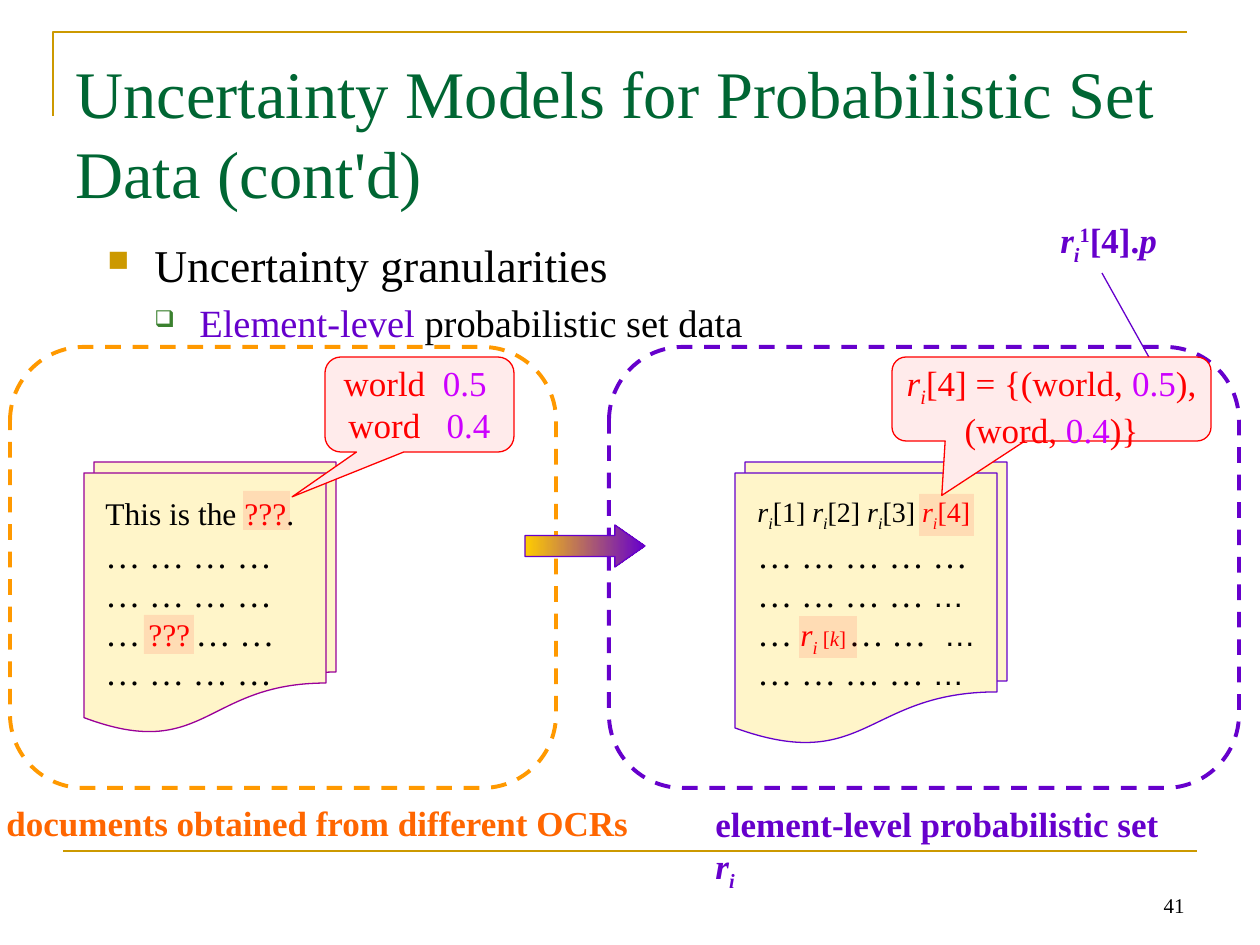
from dataclasses import dataclass, replace
from typing import NamedTuple
from lxml import etree
from pptx import Presentation
from pptx.dml.color import RGBColor
from pptx.enum.dml import MSO_LINE
from pptx.enum.shapes import MSO_CONNECTOR, MSO_SHAPE
from pptx.enum.text import MSO_ANCHOR, PP_ALIGN
from pptx.oxml.ns import qn
from pptx.util import Pt

SCALE = 914400 / 126  # EMU in one px
BLACK = RGBColor(0x00, 0x00, 0x00)
GREEN = RGBColor(0x00, 0x66, 0x33)
LEAF = RGBColor(0x3B, 0x81, 0x2F)
GOLD = RGBColor(0xCC, 0x99, 0x00)
YELLOW = RGBColor(0xFF, 0xCC, 0x00)
AMBER = RGBColor(0xFF, 0x99, 0x00)
ORANGE = RGBColor(0xFF, 0x66, 0x00)
VIOLET = RGBColor(0x66, 0x00, 0xCC)
PLUM = RGBColor(0x99, 0x00, 0x99)
MAGENTA = RGBColor(0xCC, 0x00, 0xFF)
RED = RGBColor(0xFF, 0x00, 0x00)
PINK = RGBColor(0xFF, 0xEB, 0xEB)
CREAM = RGBColor(0xFF, 0xF5, 0xC9)


class Box(NamedTuple):
    x: int
    y: int
    w: int
    h: int


@dataclass(frozen=True)
class Run:
    text: str
    color: RGBColor = BLACK
    size: int = 20
    italic: bool = False
    bold: bool = False
    base: int = 0  # percent above or below the baseline
    font: str = "Times New Roman"
    spacing: int = 0  # extra character spacing, points


@dataclass(frozen=True)
class Bullet:
    char: str
    color: RGBColor
    percent: int
    left: int
    hang: int


def px(n: float) -> int:
    return round(n * SCALE)


def emu(box: Box) -> list[int]:
    return [px(n) for n in box]


def r_sub(proto: Run) -> list[Run]:
    """The set symbol r with subscript i."""
    r = replace(proto, text="r", italic=True)
    return [r, replace(r, text="i", base=-25)]


def add_runs(p, runs: list[Run]) -> None:
    for run in runs:
        r = p.add_run()
        r.text = run.text
        fmt = {"name": run.font, "size": Pt(run.size), "bold": run.bold, "italic": run.italic}
        for key, value in fmt.items():
            setattr(r.font, key, value)
        r.font.color.rgb = run.color
        rPr = r._r.get_or_add_rPr()
        if run.base:
            rPr.set("baseline", str(run.base * 1000))
        if run.spacing:
            rPr.set("spc", str(run.spacing * 100))


def fill_text(sp, paras: list[list[Run]], align=PP_ALIGN.LEFT, margin=None, **frame):
    tf = sp.text_frame
    fmt = {"word_wrap": True, "vertical_anchor": MSO_ANCHOR.TOP, **frame}
    if margin is not None:
        fmt.update({f"margin_{side}": margin for side in ("left", "right", "top", "bottom")})
    for key, value in fmt.items():
        setattr(tf, key, value)
    for i, runs in enumerate(paras):
        p = tf.add_paragraph() if i else tf.paragraphs[0]
        p.alignment = align
        add_runs(p, runs)
    return tf


def add_text(shapes, box: Box, paras: list[list[Run]], **fmt):
    return fill_text(shapes.add_textbox(*emu(box)), paras, **fmt)


def set_bullet(p, bullet: Bullet) -> None:
    pPr = p._p.get_or_add_pPr()
    pPr.set("marL", str(px(bullet.left)))
    pPr.set("indent", str(-px(bullet.hang)))
    clr = etree.SubElement(pPr, qn("a:buClr"))
    etree.SubElement(clr, qn("a:srgbClr"), val=str(bullet.color))
    etree.SubElement(pPr, qn("a:buSzPct"), val=str(bullet.percent * 1000))
    etree.SubElement(pPr, qn("a:buChar"), char=bullet.char)


def add_shape(shapes, kind, box: Box, line=None, fill=None, width=0.75, adj=()):
    sp = shapes.add_shape(kind, *emu(box))
    sp.shadow.inherit = False
    for i, value in enumerate(adj):
        sp.adjustments[i] = value
    if fill is None:
        sp.fill.background()
    else:
        sp.fill.solid()
        sp.fill.fore_color.rgb = fill
    if line is None:
        sp.line.fill.background()
    else:
        sp.line.color.rgb = line
        sp.line.width = Pt(width)
    return sp


def add_line(shapes, x1: int, y1: int, x2: int, y2: int, color: RGBColor, width: float) -> None:
    c = shapes.add_connector(MSO_CONNECTOR.STRAIGHT, px(x1), px(y1), px(x2), px(y2))
    c.line.color.rgb = color
    c.line.width = Pt(width)
    etree.SubElement(c._element.spPr, qn("a:effectLst"))


def add_document(shapes, x: int, w: int, h: int, line: RGBColor, row_x: int, row_w: int,
                 rows: list[list[Run]], marks: list[Box]) -> None:
    for box in (Box(x + 10, 462, w, h), Box(x, 473, w, h)):
        add_shape(shapes, MSO_SHAPE.FLOWCHART_DOCUMENT, box, line, CREAM)
    for i, runs in enumerate(rows):
        add_text(shapes, Box(row_x, 488 + 39 * i, row_w, 54), [runs])
    for box in marks:
        mark = add_shape(shapes, MSO_SHAPE.RECTANGLE, box, fill=RED)
        clr = mark._element.spPr.find(qn("a:solidFill"))[0]
        etree.SubElement(clr, qn("a:alpha"), val="10000")


def main() -> None:
    prs = Presentation()
    prs.slide_width, prs.slide_height = px(1260), px(945)
    s = prs.slides.add_slide(prs.slide_layouts[6])
    sh = s.shapes

    # Frame lines and page number
    fb = sh.build_freeform(53, 116, scale=SCALE)
    fb.add_line_segments([(53, 32), (1187, 32)], close=False)
    corner = fb.convert_to_shape()
    corner.shadow.inherit = False
    corner.fill.background()
    corner.line.color.rgb = GOLD
    corner.line.width = Pt(1.5)
    add_line(sh, 63, 851, 1197, 851, GOLD, 1.5)
    add_text(sh, Box(903, 861, 294, 63), [[Run("41", size=12)]],
             align=PP_ALIGN.RIGHT, vertical_anchor=MSO_ANCHOR.BOTTOM)

    # Title and bullets
    title = "Uncertainty Models for Probabilistic Set Data (cont'd)"
    add_text(sh, Box(63, 38, 1134, 158), [[Run(title, GREEN, 38)]], margin_top=px(14))
    tf = add_text(sh, Box(95, 231, 1134, 624), [
        [Run("Uncertainty granularities", size=26)],
        [Run("Element-level ", VIOLET, 22), Run("probabilistic set data", size=22)],
    ], align=PP_ALIGN.JUSTIFY)
    bullets = (Bullet("■", GOLD, 65, 47, 47), Bullet("❑", LEAF, 60, 92, 45))
    for p, bullet, gap in zip(tf.paragraphs, bullets, (5.2, 4.4)):
        p.space_before = Pt(gap)
        set_bullet(p, bullet)

    # Dashed panels and the arrow between them
    for box, color in ((Box(10, 347, 546, 441), AMBER), (Box(609, 347, 630, 441), VIOLET)):
        panel = add_shape(sh, MSO_SHAPE.ROUNDED_RECTANGLE, box, color, width=2.25, adj=(0.167,))
        panel.line.dash_style = MSO_LINE.DASH
    arrow = add_shape(sh, MSO_SHAPE.RIGHT_ARROW, Box(525, 525, 120, 42), VIOLET, adj=(0.5, 0.716))
    arrow.fill.gradient()
    arrow.fill.gradient_angle = 0
    for stop, color in zip(arrow.fill.gradient_stops, (YELLOW, VIOLET)):
        stop.color.rgb = color

    # Labels
    bold = Run("", VIOLET, bold=True)
    add_text(sh, Box(-6, 795, 655, 54),
             [[Run("documents obtained from different OCRs", ORANGE, bold=True)]])
    add_text(sh, Box(703, 796, 496, 54),
             [[replace(bold, text="element-level probabilistic set "), *r_sub(bold)]])
    add_line(sh, 1102, 273, 1155, 368, VIOLET, 0.75)
    add_text(sh, Box(1048, 212, 123, 54), [[
        *r_sub(bold), replace(bold, text="1", base=30), replace(bold, text="[4]."),
        replace(bold, text="p", italic=True)]], word_wrap=False)

    # Scanned documents
    dots, end = Run("… … … …"), Run(" …", size=18, font="Arial")
    add_document(sh.add_group_shape().shapes, 84, 242, 262, PLUM, 93, 224, [
        [Run("This is the ", size=18), Run("???", RED, 18), Run(".", size=18)],
        [dots], [dots],
        [Run("…"), Run(" ", size=18), Run("???", RED, 18), Run(" ", size=12), Run("… …")],
        [dots],
    ], [Box(243, 491, 47, 39), Box(144, 615, 50, 39)])

    # Element-level set
    small, red = Run("", size=16), Run("", RED, 12)
    heads = [run for k in (1, 2, 3) for run in (*r_sub(small), replace(small, text=f"[{k}] "))]
    add_document(sh, 735, 262, 273, VIOLET, 745, 273, [
        [*heads, *r_sub(Run("", RED, 16)), Run("[4]", RED, 16)],
        [Run("… … … … …")], [dots, end],
        [Run("…"), Run(" ", size=18), *r_sub(Run("", RED, 18)), replace(red, text=" ["),
         replace(red, text="k", italic=True), replace(red, text="] "),
         Run("…", italic=True), Run(" …"), Run(" ", spacing=5), replace(end, text="…")],
        [dots, end],
    ], [Box(919, 494, 55, 42), Box(799, 616, 58, 42)])

    # Callouts
    words = [[Run("world", RED), Run(" ", RED, spacing=5), Run("0.5 ", MAGENTA)],
             [Run("word", RED), Run(" ", RED, spacing=10), Run("0.4", MAGENTA)]]
    element = [[*r_sub(Run("", RED)), Run("[4] = {(world, ", RED), Run("0.5", MAGENTA),
                Run("), (word, ", RED), Run("0.4", MAGENTA), Run(")}", RED)]]
    for box, adj, paras in ((Box(325, 357, 189, 95), (-0.674, 0.972, 0.167), words),
                            (Box(892, 357, 319, 84), (-0.344, 1.148, 0.167), element)):
        callout = add_shape(sh, MSO_SHAPE.ROUNDED_RECTANGULAR_CALLOUT, box, RED, PINK, adj=adj)
        fill_text(callout, paras, align=PP_ALIGN.CENTER, margin=0)

    prs.save("out.pptx")


if __name__ == "__main__":
    main()
